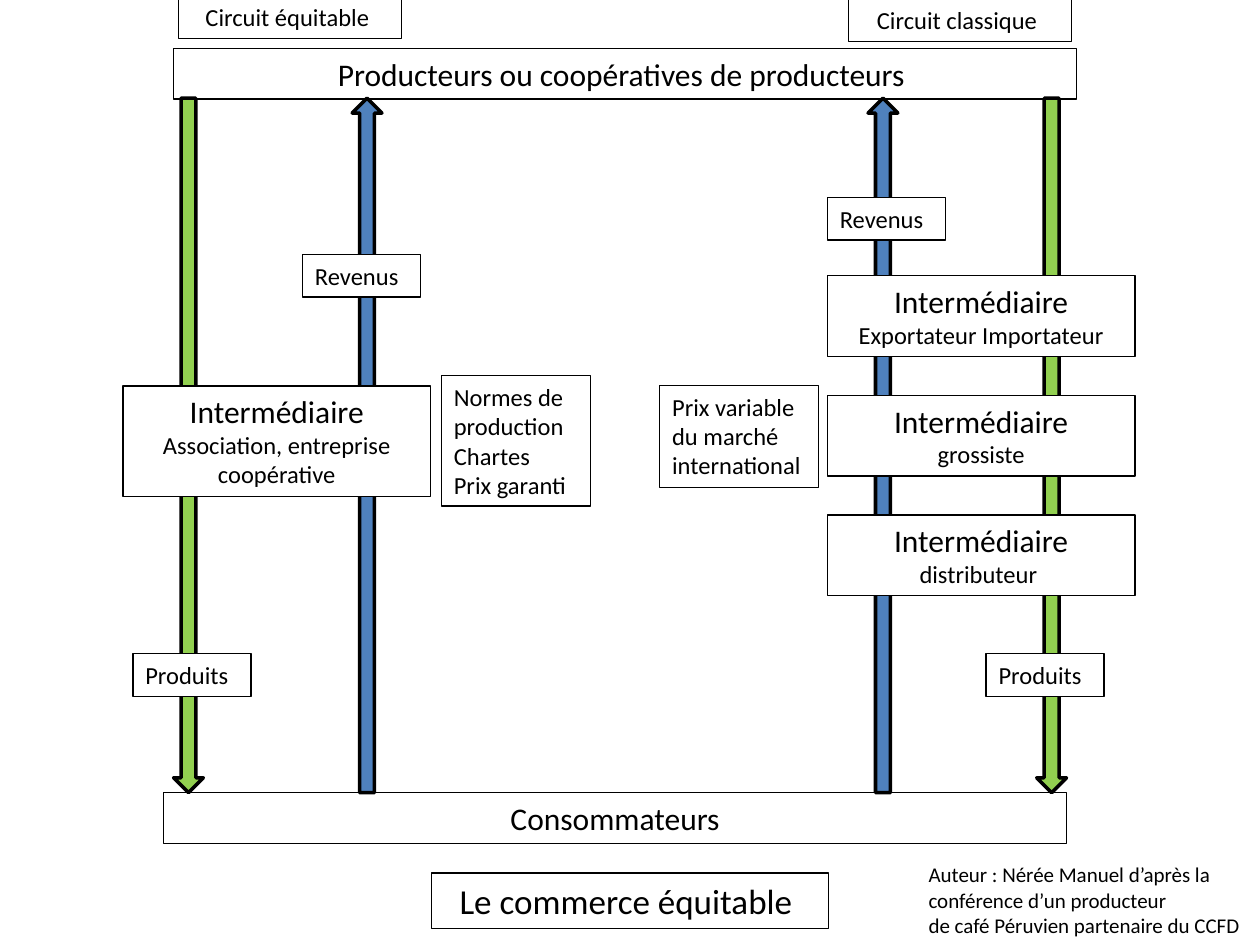
import dataclasses

import pptx
import pptx.dml.color
import pptx.enum.shapes
import pptx.enum.text
import pptx.util

Cm = pptx.util.Cm
Pt = pptx.util.Pt
RGB = pptx.dml.color.RGBColor
ARROWS = pptx.enum.shapes.MSO_SHAPE
ALIGN = pptx.enum.text.PP_ALIGN


@dataclasses.dataclass(frozen=True)
class Theme:
    font: str = "Calibri"
    ink: RGB = RGB(0x00, 0x00, 0x00)
    paper: RGB = RGB(0xFF, 0xFF, 0xFF)
    products: RGB = RGB(0x92, 0xD0, 0x50)
    income: RGB = RGB(0x4F, 0x81, 0xBD)
    title: int = 20
    heading: int = 18
    body: int = 14
    credit: int = 12
    box_line: float = 0.75
    arrow_line: float = 2


THEME = Theme()


def apply_format(target, values):
    for name, value in values.items():
        setattr(target, name, value)


def outline(shape, width):
    shape.line.color.rgb = THEME.ink
    shape.line.width = Pt(width)


def add_text(slide, position, lines, align=ALIGN.LEFT, wrap=True):
    shape = slide.shapes.add_textbox(*map(Cm, position))
    frame = shape.text_frame
    apply_format(frame, {
        "word_wrap": wrap,
        "auto_size": pptx.enum.text.MSO_AUTO_SIZE.SHAPE_TO_FIT_TEXT,
        "vertical_anchor": pptx.enum.text.MSO_ANCHOR.TOP,
    })
    for index, (text, size) in enumerate(lines):
        paragraph = frame.add_paragraph() if index else frame.paragraphs[0]
        paragraph.alignment = align
        run = paragraph.add_run()
        run.text = text
        apply_format(run.font, {"name": THEME.font, "size": Pt(size)})
        run.font.color.rgb = THEME.ink
    return shape


def add_box(slide, position, lines, align=ALIGN.CENTER):
    shape = add_text(slide, position, lines, align)
    shape.fill.solid()
    shape.fill.fore_color.rgb = THEME.paper
    outline(shape, THEME.box_line)


def add_flow(slide, left, kind, color):
    arrow = slide.shapes.add_shape(kind, Cm(left), Cm(1.98), Cm(0.6), Cm(14))
    arrow.shadow.inherit = False
    arrow.fill.solid()
    arrow.fill.fore_color.rgb = color
    outline(arrow, THEME.arrow_line)


def add_intermediary(slide, left, top, height, role):
    lines = [("Intermédiaire", THEME.heading), (role, THEME.body)]
    add_box(slide, (left, top, 6.2, height), lines)


def add_flow_label(slide, left, top, text):
    add_box(slide, (left, top, 2.38, 0.86), [(text, THEME.body)], ALIGN.LEFT)


def add_note(slide, position, texts):
    add_box(slide, position, [(text, THEME.body) for text in texts], ALIGN.LEFT)


def main():
    presentation = pptx.Presentation()
    apply_format(presentation, {"slide_width": Cm(25.4), "slide_height": Cm(19.05)})
    slide = presentation.slides.add_slide(presentation.slide_layouts[6])

    for left, top, text in [
        (3.5, 0.98, "Producteurs ou coopératives de producteurs "),
        (3.3, 15.98, "Consommateurs"),
    ]:
        add_box(slide, (left, top, 18.2, 1.02), [(text, THEME.heading)])

    for left in (3.5, 20.9):
        add_flow(slide, left, ARROWS.DOWN_ARROW, THEME.products)
    for left in (7.1, 17.5):
        add_flow(slide, left, ARROWS.UP_ARROW, THEME.income)

    add_intermediary(slide, 2.48, 7.78, 2.23, "Association, entreprise coopérative")
    roles = ["Exportateur Importateur", "grossiste", "distributeur "]
    for index, role in enumerate(roles):
        add_intermediary(slide, 16.68, 5.56 + index * 2.41, 1.63, role)

    for left, top, text in [
        (16.68, 3.98, "Revenus"),
        (6.1, 5.13, "Revenus"),
        (19.88, 13.18, "Produits"),
        (2.68, 13.18, "Produits"),
    ]:
        add_flow_label(slide, left, top, text)

    add_note(slide, (8.9, 7.57, 3, 2.63),
             ["Normes de production", "Chartes", "Prix garanti"])
    add_note(slide, (13.3, 7.77, 3.2, 2.06), ["Prix variable du marché international"])

    credit = [
        "Auteur : Nérée Manuel d’après la",
        "conférence d’un producteur",
        "de café Péruvien partenaire du CCFD",
    ]
    add_text(slide, (18.47, 17.25, 6.93, 1.8),
             [(text, THEME.credit) for text in credit], wrap=False)

    for left, top, text in [
        (3.6, -0.08, "Circuit équitable "),
        (17.1, -0.02, "Circuit classique "),
    ]:
        add_box(slide, (left, top, 4.5, 0.86), [(text, THEME.body)])
    add_box(slide, (8.7, 17.6, 8, 1.12), [("Le commerce équitable ", THEME.title)])

    presentation.save("out.pptx")


if __name__ == "__main__":
    main()
